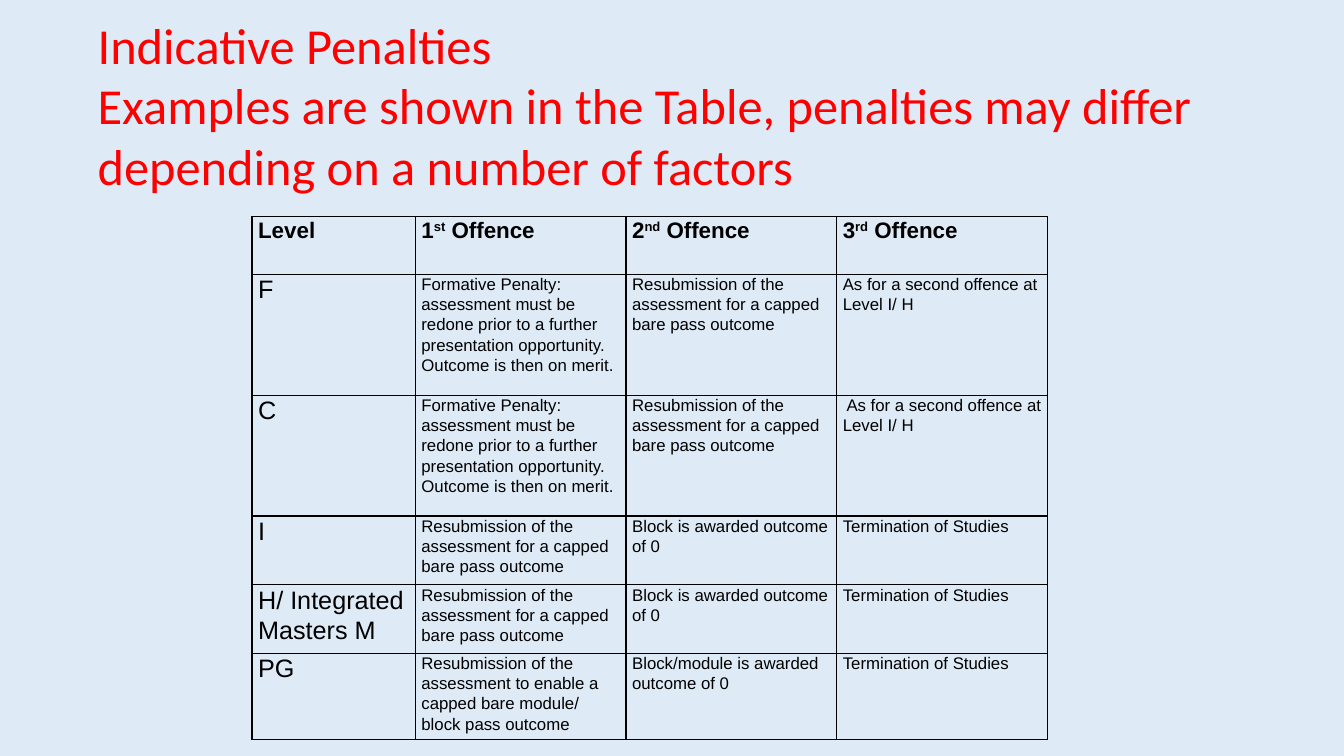
"""Build the slide of indicative penalties by level and offence."""
import lxml.etree
import pptx
import pptx.dml.color
import pptx.oxml.ns
import pptx.util

Inches = pptx.util.Inches


def color(hex_string):
    return pptx.dml.color.RGBColor.from_string(hex_string)


def add_text(paragraph, text, size=12, font="Arial", fill="000000", bold=False, raised=False):
    run = paragraph.add_run()
    run.text = text
    run.font.size = pptx.util.Pt(size)
    run.font.name = font
    run.font.bold = bold
    run.font.color.rgb = color(fill)
    if raised:
        run.font._element.set("baseline", "30000")


presentation = pptx.Presentation()
presentation.slide_width = Inches(13.33)
presentation.slide_height = Inches(7.5)
slide = presentation.slides.add_slide(presentation.slide_layouts[6])
slide.background.fill.solid()
slide.background.fill.fore_color.rgb = color("DEEBF7")

title = slide.shapes.add_textbox(Inches(0.87), Inches(0.09), Inches(11.13), Inches(1.92))
title.text_frame.word_wrap = True
title_style = {"size": 36, "font": "Calibri", "fill": "FF0000"}
add_text(title.text_frame.paragraphs[0], "Indicative Penalties", **title_style)
add_text(
    title.text_frame.add_paragraph(),
    "Examples are shown in the Table, penalties may differ depending on a number of factors",
    **title_style,
)

formative = (
    "Formative Penalty: assessment must be redone prior to a further "
    "presentation opportunity. Outcome is then on merit."
)
resubmission = "Resubmission of the assessment for a capped bare pass outcome"
second_offence = "As for a second offence at Level I/ H"
zero_outcome = "Block is awarded outcome of 0"
termination = "Termination of Studies"
penalties = [
    ["Level", ("1", "st"), ("2", "nd"), ("3", "rd")],
    ["F", formative, resubmission, second_offence],
    ["C", formative, resubmission, " " + second_offence],
    ["I", resubmission, zero_outcome, termination],
    ["H/ Integrated Masters M", resubmission, zero_outcome, termination],
    [
        "PG",
        "Resubmission of the assessment to enable a capped bare module/ block pass outcome",
        "Block/module is awarded outcome of 0",
        termination,
    ],
]
column_widths = [1.62, 2.09, 2.09, 2.09]
row_heights = [0.57, 1.2, 1.2, 0.68, 0.68, 0.86]

table = slide.shapes.add_table(
    len(row_heights), len(column_widths), Inches(2.5), Inches(2.15),
    Inches(sum(column_widths)), Inches(sum(row_heights)),
).table
table.first_row = False
table.horz_banding = False
for column, width in zip(table.columns, column_widths):
    column.width = Inches(width)
for row, height in zip(table.rows, row_heights):
    row.height = Inches(height)

for row_index, row_values in enumerate(penalties):
    for column_index, value in enumerate(row_values):
        cell = table.cell(row_index, column_index)
        cell.margin_left = cell.margin_right = Inches(0.06)
        cell.margin_top = cell.margin_bottom = 0
        properties = cell._tc.get_or_add_tcPr()
        for side in ("lnL", "lnR", "lnT", "lnB"):
            border = lxml.etree.SubElement(
                properties, pptx.oxml.ns.qn("a:" + side), w=str(pptx.util.Pt(1))
            )
            border_fill = lxml.etree.SubElement(border, pptx.oxml.ns.qn("a:solidFill"))
            lxml.etree.SubElement(border_fill, pptx.oxml.ns.qn("a:srgbClr"), val="000000")
        cell.fill.background()

        paragraph = cell.text_frame.paragraphs[0]
        paragraph.line_spacing = 1.07
        if isinstance(value, tuple):
            number, suffix = value
            add_text(paragraph, number, size=16, bold=True)
            add_text(paragraph, suffix, size=16, bold=True, raised=True)
            add_text(paragraph, " Offence", size=16, bold=True)
        elif row_index == 0:
            add_text(paragraph, value, size=16, bold=True)
        else:
            add_text(paragraph, value, size=18 if column_index == 0 else 12)

presentation.save("out.pptx")
